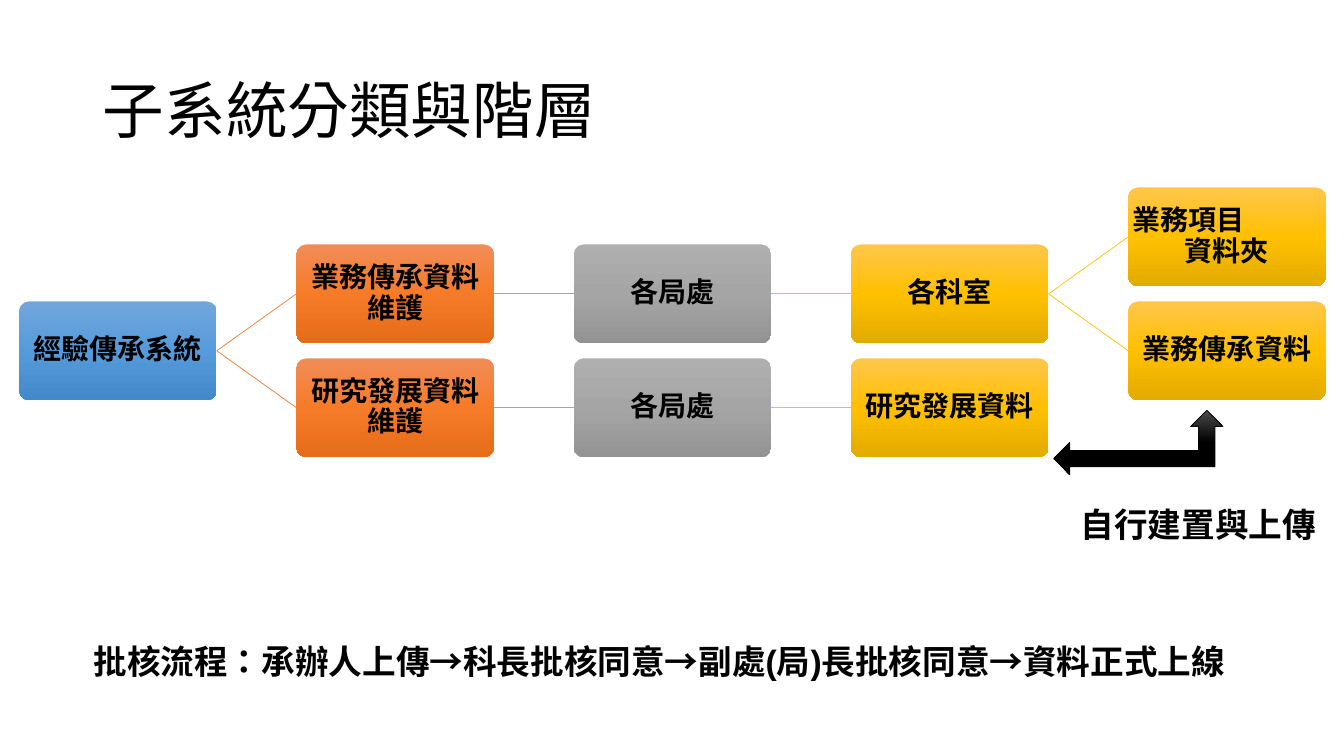
from copy import deepcopy
from dataclasses import dataclass

from pptx import Presentation
from pptx.dml.color import RGBColor
from pptx.enum.lang import MSO_LANGUAGE_ID
from pptx.enum.shapes import MSO_CONNECTOR, MSO_SHAPE
from pptx.enum.text import MSO_ANCHOR, MSO_AUTO_SIZE, PP_ALIGN
from pptx.oxml.ns import qn
from pptx.util import Inches, Pt

LEFT, CENTER = PP_ALIGN.LEFT, PP_ALIGN.CENTER
MIDDLE, TOP = MSO_ANCHOR.MIDDLE, MSO_ANCHOR.TOP
NO_AUTOFIT = MSO_AUTO_SIZE.NONE
ROUNDED, LEFT_UP_ARROW = MSO_SHAPE.ROUNDED_RECTANGLE, MSO_SHAPE.LEFT_UP_ARROW
STRAIGHT = MSO_CONNECTOR.STRAIGHT
CHINESE = MSO_LANGUAGE_ID.TRADITIONAL_CHINESE
LEFT_SIDE, RIGHT_SIDE = 1, 3
TITLE_ONLY = 5


@dataclass(frozen=True)
class Theme:
    font: str = "Arial"
    text: str = "000000"
    blue: tuple = ("71A6DB", "559BDB", "448ACA")
    orange: tuple = ("F18C57", "F67B28", "E56C19")
    gray: tuple = ("AFAFAF", "A5A5A5", "939393")
    gold: tuple = ("FFC64B", "FFC000", "E3AB00")
    black: tuple = ("4B4B4B", "000000", "000000")
    orange_line: str = "ED7D31"
    gray_line: str = "A5A5A5"
    gold_line: str = "FFC000"
    title_size: int = 44
    caption_size: int = 24
    node_size: int = 20
    line_width: float = 0.5


@dataclass(frozen=True)
class Grid:
    left: float = 0.19
    top: float = 1.86
    column_pitch: float = 2.75
    row_pitch: float = 1.13
    width: float = 1.96
    height: float = 0.98

    def cell(self, column, row):
        return (self.left + column * self.column_pitch, self.top + row * self.row_pitch,
                self.width, self.height)


def apply_format(target, values):
    for name, value in values.items():
        setattr(target, name, value)


class HierarchySlide:
    def __init__(self, deck, theme, grid):
        self.theme, self.grid = theme, grid
        self.page = deck.slides.add_slide(deck.slide_layouts[TITLE_ONLY])

    def fill_text(self, shape, lines, size, bold=True, spacing=1.0, anchor=TOP, inset=None):
        frame = shape.text_frame
        apply_format(frame, {"word_wrap": True, "auto_size": NO_AUTOFIT, "vertical_anchor": anchor})
        if inset is not None:
            sides = ("margin_left", "margin_top", "margin_right", "margin_bottom")
            apply_format(frame, dict.fromkeys(sides, Inches(inset)))
        for index, (text, align) in enumerate(lines):
            para = frame.add_paragraph() if index else frame.paragraphs[0]
            apply_format(para, {"alignment": align, "line_spacing": spacing,
                                "space_before": Pt(0), "space_after": Pt(0)})
            span = para.add_run()
            span.text = text
            apply_format(span.font, {"name": self.theme.font, "size": Pt(size), "bold": bold,
                                     "language_id": CHINESE})
            span.font.color.rgb = RGBColor.from_string(self.theme.text)

    def title(self, text, place):
        box = self.page.shapes.title
        apply_format(box, dict(zip(("left", "top", "width", "height"), map(Inches, place))))
        self.fill_text(box, [(text, LEFT)], self.theme.title_size, False, 0.9, MIDDLE)

    def caption(self, text, place, align):
        box = self.page.shapes.add_textbox(*map(Inches, place))
        self.fill_text(box, [(text, align)], self.theme.caption_size)

    def gradient_shape(self, kind, place, colors):
        shape = self.page.shapes.add_shape(kind, *map(Inches, place))
        shape.shadow.inherit = False
        shape.fill.gradient()
        shape.fill.gradient_angle = 270
        stop_list = shape.element.spPr.find(qn("a:gradFill")).find(qn("a:gsLst"))
        stop_list.insert(1, deepcopy(stop_list[0]))
        for stop, position, color in zip(shape.fill.gradient_stops, (0, 0.5, 1), colors):
            stop.position = position
            stop.color.rgb = RGBColor.from_string(color)
        shape.line.fill.background()
        return shape

    def node(self, column, row, colors, lines):
        shape = self.gradient_shape(ROUNDED, self.grid.cell(column, row), colors)
        shape.adjustments[0] = 0.1
        self.fill_text(shape, lines, self.theme.node_size, True, 0.9, MIDDLE, 0.01)
        return shape

    def outline(self, shape, color):
        shape.line.color.rgb = RGBColor.from_string(color)
        shape.line.width = Pt(self.theme.line_width)

    def link(self, parent, child, color):
        line = self.page.shapes.add_connector(STRAIGHT, 0, 0, 0, 0)
        line.begin_connect(parent, RIGHT_SIDE)
        line.end_connect(child, LEFT_SIDE)
        self.outline(line, color)
        properties = line.element.spPr
        properties.append(properties.makeelement(qn("a:effectLst"), {}))

    def arrow(self, place):
        shape = self.gradient_shape(LEFT_UP_ARROW, place, self.theme.black)
        self.outline(shape, self.theme.text)


def main():
    deck = Presentation()
    deck.slide_width, deck.slide_height = Inches(13.33), Inches(7.5)
    theme = Theme()
    slide = HierarchySlide(deck, theme, Grid())
    slide.title("子系統分類與階層", (0.92, 0.4, 11.5, 1.45))

    nodes = {
        "system": (0, 1, theme.blue, [("經驗傳承系統", CENTER)]),
        "heritage": (1, 0.5, theme.orange, [("業務傳承資料維護", CENTER)]),
        "heritage_bureaus": (2, 0.5, theme.gray, [("各局處", CENTER)]),
        "sections": (3, 0.5, theme.gold, [("各科室", CENTER)]),
        "folders": (4, 0, theme.gold, [("業務項目", LEFT), ("資料夾", CENTER)]),
        "heritage_data": (4, 1, theme.gold, [("業務傳承資料", CENTER)]),
        "research": (1, 1.5, theme.orange, [("研究發展資料維護", CENTER)]),
        "research_bureaus": (2, 1.5, theme.gray, [("各局處", CENTER)]),
        "research_data": (3, 1.5, theme.gold, [("研究發展資料", CENTER)]),
    }
    shapes = {name: slide.node(*values) for name, values in nodes.items()}

    links = [
        ("system", "heritage", theme.orange_line),
        ("system", "research", theme.orange_line),
        ("heritage", "heritage_bureaus", theme.gray_line),
        ("research", "research_bureaus", theme.gray_line),
        ("heritage_bureaus", "sections", theme.gold_line),
        ("research_bureaus", "research_data", theme.gold_line),
        ("sections", "folders", theme.gold_line),
        ("sections", "heritage_data", theme.gold_line),
    ]
    for parent, child, color in links:
        slide.link(shapes[parent], shapes[child], color)

    slide.arrow((10.45, 4.07, 1.68, 0.64))
    slide.caption("批核流程：承辦人上傳→科長批核同意→副處(局)長批核同意→資料正式上線",
                  (0.83, 6.31, 12.5, 0.5), LEFT)
    slide.caption("自行建置與上傳", (10.46, 4.95, 2.85, 0.5), CENTER)
    deck.save("out.pptx")


if __name__ == "__main__":
    main()
